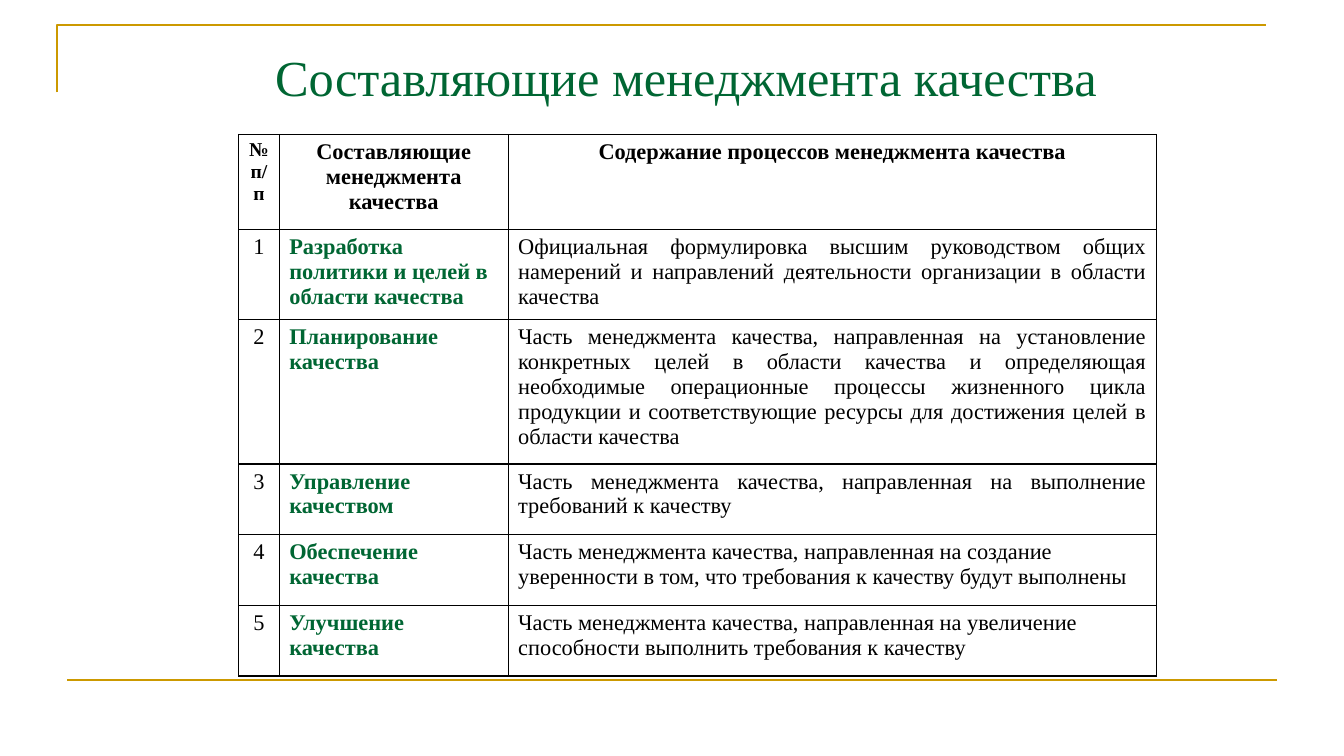
import pptx
import pptx.dml.color
import pptx.enum.shapes
import pptx.enum.text
import pptx.oxml
import pptx.oxml.ns
import pptx.util

Pt = pptx.util.Pt
RGB = pptx.dml.color.RGBColor
ALIGN = pptx.enum.text.PP_ALIGN
ANCHOR = pptx.enum.text.MSO_ANCHOR
qn = pptx.oxml.ns.qn

GREEN = RGB(0x00, 0x66, 0x33)
GOLD = RGB(0xCC, 0x99, 0x00)
BLACK = RGB(0x00, 0x00, 0x00)

TITLE = "Составляющие менеджмента качества"
HEADS = ["№ п/п", TITLE, "Содержание процессов менеджмента качества"]
PART = "Часть менеджмента качества, направленная на "
# Name, content, alignment of the content
ROWS = [
    ("Разработка политики и целей в области качества",
     "Официальная формулировка высшим руководством общих намерений и "
     "направлений деятельности организации в области качества", ALIGN.JUSTIFY),
    ("Планирование качества",
     PART + "установление конкретных целей в области качества и определяющая "
     "необходимые операционные процессы жизненного цикла продукции и "
     "соответствующие ресурсы для достижения целей в области качества",
     ALIGN.JUSTIFY),
    ("Управление качеством",
     PART + "выполнение требований к качеству", ALIGN.JUSTIFY),
    ("Обеспечение качества",
     PART + "создание уверенности в том, что требования к качеству будут "
     "выполнены", ALIGN.LEFT),
    ("Улучшение качества",
     PART + "увеличение способности выполнить требования к качеству",
     ALIGN.LEFT),
]
WIDTHS = [29, 163.5, 463]
HEIGHTS = [68, 64.5, 103, 50.5, 50.5, 50.5]


def write(frame, text, size=16, color=BLACK, bold=False, align=ALIGN.LEFT):
    para = frame.paragraphs[0]
    para.alignment = align
    run = para.add_run()
    run.text = text
    font = run.font
    font.name, font.size, font.bold = "Times New Roman", Pt(size), bold
    font.color.rgb = color


class Page:
    """Style of the deck and its current slide."""

    def __init__(self, deck):
        self.rule = 1.5
        self.edge = 1
        self.slide = deck.slides.add_slide(deck.slide_layouts[5])
        self.shapes = self.slide.shapes

    def title(self, text, left, top, width, height):
        box = self.shapes.title
        box.left, box.top = Pt(left), Pt(top)
        box.width, box.height = Pt(width), Pt(height)
        box.text_frame.word_wrap = True
        box.text_frame.vertical_anchor = ANCHOR.MIDDLE
        write(box.text_frame, text, size=36, color=GREEN, align=ALIGN.CENTER)

    def stroke(self, shape):
        shape.line.color.rgb = GOLD
        shape.line.width = Pt(self.rule)

    def corner(self, start, *points):
        form = self.shapes.build_freeform(Pt(start[0]), Pt(start[1]))
        form.add_line_segments([(Pt(x), Pt(y)) for x, y in points], close=False)
        shape = form.convert_to_shape()
        shape.shadow.inherit = False
        shape.fill.background()
        self.stroke(shape)

    def line(self, x1, y1, x2, y2):
        kind = pptx.enum.shapes.MSO_CONNECTOR.STRAIGHT
        link = self.shapes.add_connector(kind, Pt(x1), Pt(y1), Pt(x2), Pt(y2))
        self.stroke(link)
        props = link._element.spPr
        props.append(props.makeelement(qn("a:effectLst"), {}))

    def border(self, cell):
        props = cell._tc.get_or_add_tcPr()
        space = pptx.oxml.ns.nsdecls("a")
        for spot, side in enumerate("LRTB"):
            props.insert(spot, pptx.oxml.parse_xml(
                f'<a:ln{side} {space} w="{Pt(self.edge)}"><a:solidFill>'
                f'<a:srgbClr val="{BLACK}"/></a:solidFill></a:ln{side}>'))

    def table(self, left, top, widths, heights):
        grid = self.shapes.add_table(
            len(heights), len(widths), Pt(left), Pt(top),
            Pt(sum(widths)), Pt(sum(heights))).table
        grid.first_row = grid.horz_banding = False
        for col, width in zip(grid.columns, widths):
            col.width = Pt(width)
        for row, height in zip(grid.rows, heights):
            row.height = Pt(height)
        for cell in grid.iter_cells():
            cell.fill.background()
            self.border(cell)
        return grid


def main():
    deck = pptx.Presentation()
    deck.slide_width, deck.slide_height = Pt(960), Pt(540)
    page = Page(deck)

    # Frame lines
    page.corner((40.5, 66), (40.5, 18), (904.5, 18))
    page.line(48, 486, 912, 486)

    # Title
    page.title(TITLE, 173.5, 26, 633.5, 57)

    # Table
    grid = page.table(170.5, 96, WIDTHS, HEIGHTS)
    for col, head in enumerate(HEADS):
        write(grid.cell(0, col).text_frame, head, size=16 if col else 14,
              bold=True, align=ALIGN.CENTER)
    for row, (name, text, align) in enumerate(ROWS, 1):
        write(grid.cell(row, 0).text_frame, str(row), align=ALIGN.CENTER)
        write(grid.cell(row, 1).text_frame, name, color=GREEN, bold=True)
        write(grid.cell(row, 2).text_frame, text, align=align)

    deck.save("out.pptx")


if __name__ == "__main__":
    main()
